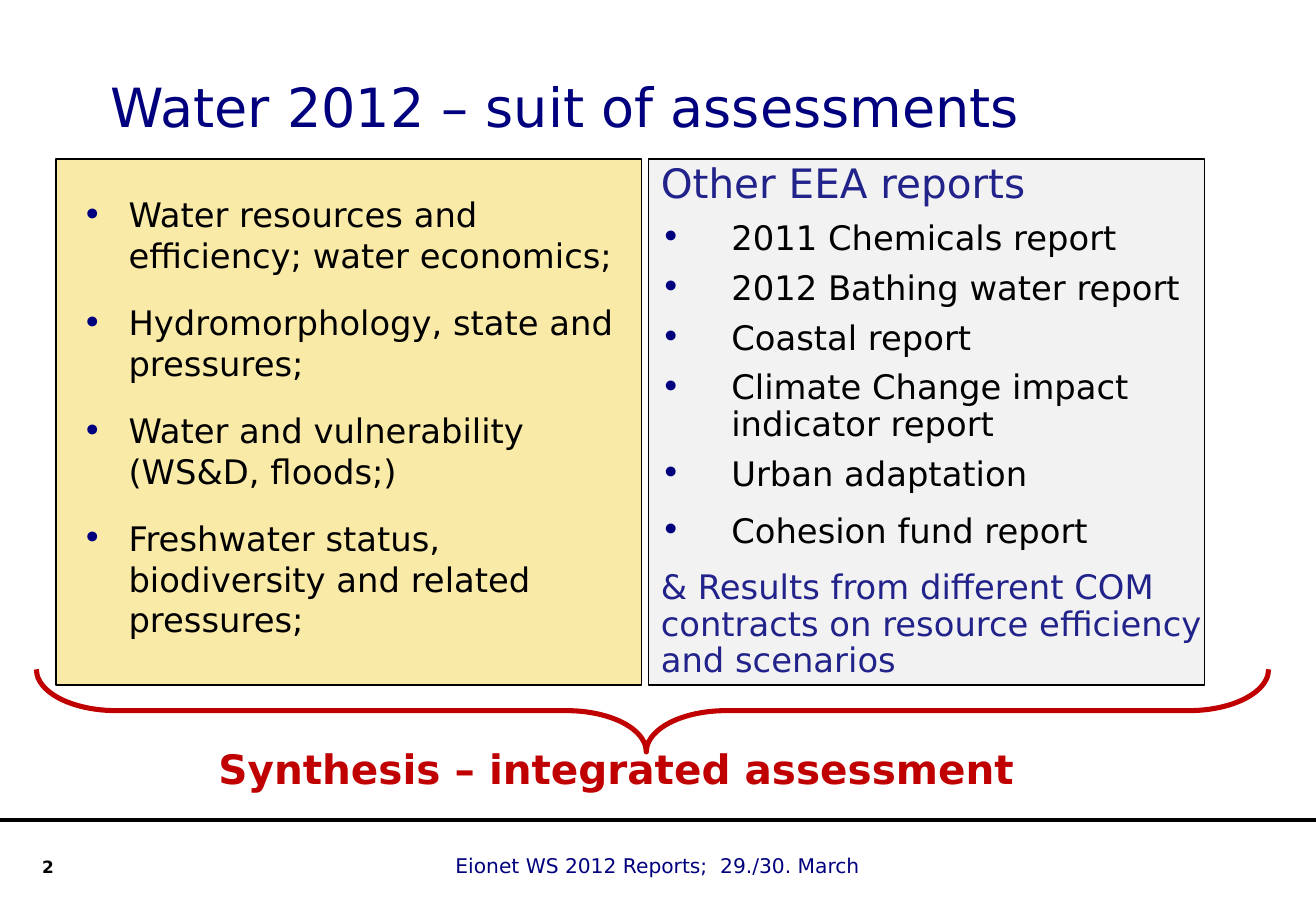
from dataclasses import dataclass, field
from typing import Any

from lxml.etree import SubElement
from pptx import Presentation
from pptx.dml.color import RGBColor
from pptx.enum.shapes import MSO_CONNECTOR, MSO_SHAPE
from pptx.enum.text import MSO_ANCHOR, PP_ALIGN
from pptx.oxml.ns import qn
from pptx.util import Pt

PX = 9144
SLIDE_WIDTH, SLIDE_HEIGHT = 1083, 750
FONT = "DejaVu Sans"

NAVY = RGBColor(0x00, 0x00, 0x7E)
INDIGO = RGBColor(0x22, 0x22, 0x8B)
BLACK = RGBColor(0x00, 0x00, 0x00)
RED = RGBColor(0xC0, 0x00, 0x00)
YELLOW = RGBColor(0xFA, 0xEA, 0xA8)
GREY = RGBColor(0xF2, 0xF2, 0xF2)

THEME_FORMAT: dict[str, Any] = {
    "line_spacing": Pt(24), "space_before": Pt(4), "space_after": Pt(12)}
REPORT_FORMAT: dict[str, Any] = {"line_spacing": 0.9, "space_before": Pt(8)}
CLOSING_FORMAT: dict[str, Any] = REPORT_FORMAT | {"space_before": Pt(12)}


@dataclass(frozen=True)
class Box:
    """A rectangle on the slide in px."""
    left: int
    top: int
    width: int
    height: int

    def emu(self) -> tuple[int, int, int, int]:
        """Return the four lengths in EMU."""
        return (self.left * PX, self.top * PX, self.width * PX, self.height * PX)


@dataclass(frozen=True)
class Line:
    """A paragraph with its look; indent is the bullet's hanging indent in px."""
    text: str
    size: int
    color: RGBColor
    bold: bool = False
    indent: tuple[int, int] | None = None
    format: dict[str, Any] = field(default_factory=dict)


@dataclass(frozen=True)
class TextBlock:
    """A text box holding paragraphs."""
    box: Box
    lines: list[Line]
    anchor: MSO_ANCHOR = MSO_ANCHOR.TOP


@dataclass(frozen=True)
class Panel:
    """A filled background rectangle."""
    box: Box
    fill: RGBColor


PANELS = [
    Panel(Box(534, 131, 457, 433), GREY),
    Panel(Box(46, 131, 482, 433), YELLOW),
]

THEMES = [
    "Water resources and efficiency; water economics;",
    "Hydromorphology, state and pressures;",
    "Water and vulnerability (WS&D, floods;)",
    "Freshwater status, biodiversity and related pressures;",
]

REPORTS = [
    "2011 Chemicals report",
    "2012 Bathing water report",
    "Coastal report",
    "Climate Change impact indicator report",
    "Urban adaptation",
]

TEXT_BLOCKS = [
    TextBlock(Box(365, 698, 366, 30),
              [Line("Eionet WS 2012 Reports;  29./30. March", 12, NAVY)]),
    TextBlock(Box(81, 25, 921, 125),
              [Line("Water 2012 – suit of assessments", 32, NAVY)], MSO_ANCHOR.MIDDLE),
    TextBlock(Box(38, 155, 487, 450),
              [Line(theme, 20, BLACK, indent=(58, -38), format=THEME_FORMAT)
               for theme in THEMES]),
    TextBlock(Box(534, 130, 496, 450), [
        Line("Other EEA reports", 24, INDIGO, format=REPORT_FORMAT),
        *(Line(report, 20, BLACK, indent=(58, -58), format=REPORT_FORMAT)
          for report in REPORTS),
        Line("Cohesion fund report", 20, BLACK, indent=(58, -58), format=CLOSING_FORMAT),
        Line("& Results from different COM contracts on resource efficiency and scenarios",
             20, INDIGO, format=CLOSING_FORMAT),
    ]),
    TextBlock(Box(0, 700, 54, 50),
              [Line("2", 10, BLACK, bold=True, format={"alignment": PP_ALIGN.RIGHT})]),
    TextBlock(Box(170, 608, 714, 50),
              [Line("Synthesis – integrated assessment", 24, RED, bold=True)]),
]


def set_values(target: Any, values: dict[str, Any]) -> None:
    """Set each named attribute of the target."""
    for name, value in values.items():
        setattr(target, name, value)


def add_bullet(paragraph: Any, indent: tuple[int, int]) -> None:
    """Give the paragraph a navy bullet with a hanging indent."""
    properties = paragraph._p.get_or_add_pPr()
    margin, hanging = indent
    properties.set("marL", str(margin * PX))
    properties.set("indent", str(hanging * PX))
    bullet_color = SubElement(properties, qn("a:buClr"))
    SubElement(bullet_color, qn("a:srgbClr"), val=str(NAVY))
    SubElement(properties, qn("a:buFont"), typeface=FONT)
    SubElement(properties, qn("a:buChar"), char="•")


def draw_text(slide: Any, block: TextBlock) -> None:
    """Draw a text box and its paragraphs."""
    frame = slide.shapes.add_textbox(*block.box.emu()).text_frame
    set_values(frame, {"word_wrap": True, "vertical_anchor": block.anchor})
    for index, line in enumerate(block.lines):
        paragraph = frame.add_paragraph() if index else frame.paragraphs[0]
        if line.indent:
            add_bullet(paragraph, line.indent)
        set_values(paragraph, line.format if index else line.format | {"space_before": Pt(0)})
        run = paragraph.add_run()
        run.text = line.text
        set_values(run.font, {"name": FONT, "size": Pt(line.size), "bold": line.bold})
        run.font.color.rgb = line.color


def draw_panel(slide: Any, panel: Panel) -> None:
    """Draw a background rectangle with a thin outline."""
    rectangle = slide.shapes.add_shape(MSO_SHAPE.RECTANGLE, *panel.box.emu())
    rectangle.shadow.inherit = False
    rectangle.fill.solid()
    rectangle.fill.fore_color.rgb = panel.fill
    rectangle.line.color.rgb = BLACK
    rectangle.line.width = Pt(0.75)


def draw_footer_rule(slide: Any, top: int) -> None:
    """Draw the line across the slide above the footer."""
    rule = slide.shapes.add_connector(
        MSO_CONNECTOR.STRAIGHT, 0, top * PX, SLIDE_WIDTH * PX, top * PX)
    rule.line.color.rgb = BLACK
    rule.line.width = Pt(2.25)
    SubElement(rule._element.spPr, qn("a:effectLst"))


def draw_synthesis_brace(slide: Any, box: Box) -> None:
    """Draw the brace that gathers both panels."""
    brace = slide.shapes.add_shape(MSO_SHAPE.LEFT_BRACE, *box.emu())
    brace.shadow.inherit = False
    brace.rotation = 270
    brace.adjustments[0] = 0.965
    brace.adjustments[1] = 0.495
    brace.fill.background()
    brace.line.color.rgb = RED
    brace.line.width = Pt(3)


def main() -> None:
    """Build and save the slide."""
    presentation = Presentation()
    set_values(presentation, {
        "slide_width": SLIDE_WIDTH * PX, "slide_height": SLIDE_HEIGHT * PX})
    slide = presentation.slides.add_slide(presentation.slide_layouts[6])
    draw_footer_rule(slide, 675)
    for panel in PANELS:
        draw_panel(slide, panel)
    for block in TEXT_BLOCKS:
        draw_text(slide, block)
    draw_synthesis_brace(slide, Box(503, 78, 68, 1014))
    presentation.save("out.pptx")


if __name__ == "__main__":
    main()
